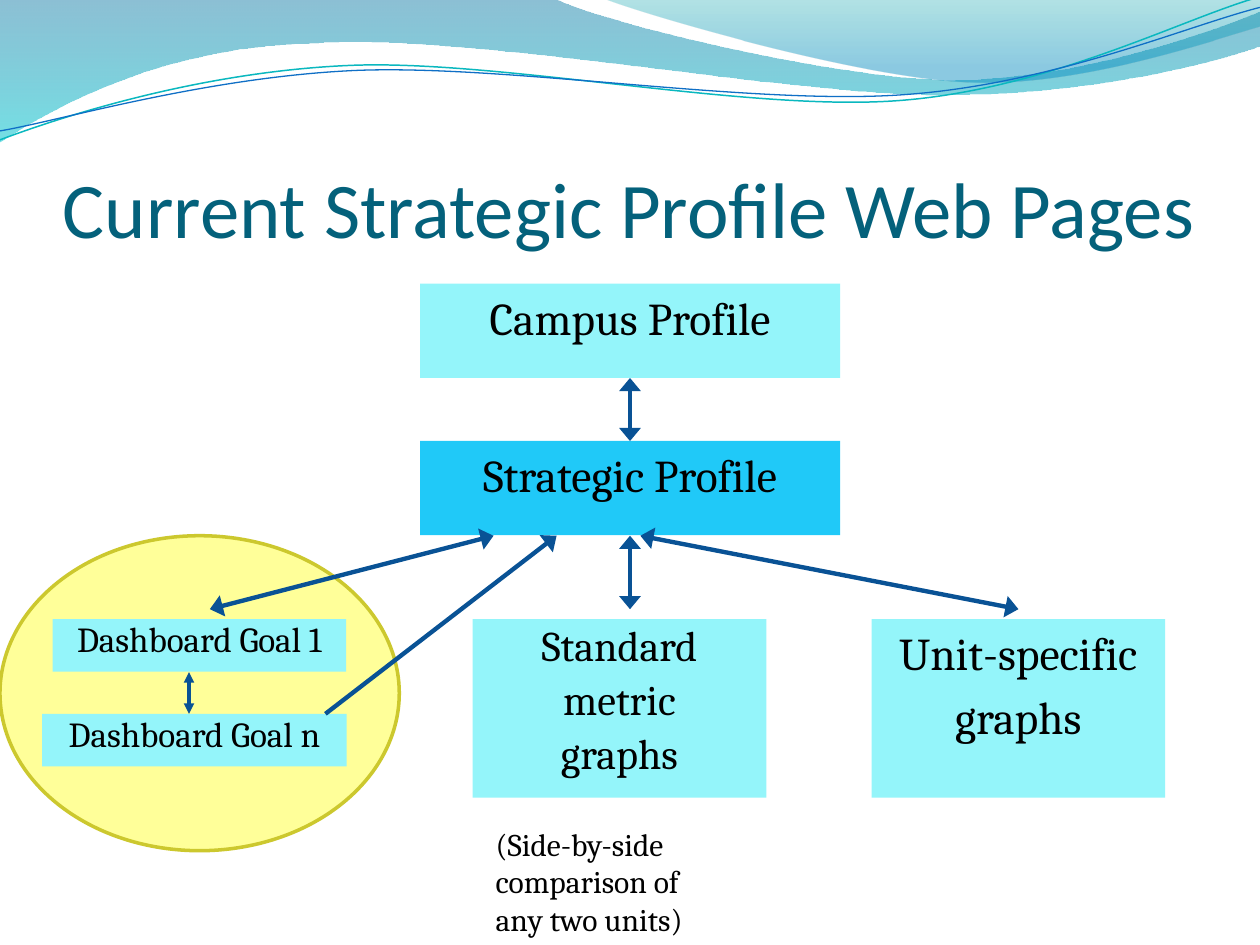
from dataclasses import dataclass

from lxml import etree
from pptx import Presentation
from pptx.dml.color import RGBColor
from pptx.enum.shapes import MSO_CONNECTOR, MSO_SHAPE
from pptx.enum.text import MSO_ANCHOR, MSO_AUTO_SIZE, PP_ALIGN
from pptx.oxml.ns import qn
from pptx.util import Cm, Pt

RECT, ELLIPSE = MSO_SHAPE.RECTANGLE, MSO_SHAPE.OVAL
STRAIGHT = MSO_CONNECTOR.STRAIGHT
CENTER, LEFT = PP_ALIGN.CENTER, PP_ALIGN.LEFT
TOP, BOTTOM = MSO_ANCHOR.TOP, MSO_ANCHOR.BOTTOM
FIT_SHAPE = MSO_AUTO_SIZE.SHAPE_TO_FIT_TEXT


@dataclass(frozen=True)
class Theme:
    title_font: str = "Calibri"
    body_font: str = "Cambria"
    title: str = "04617B"
    text: str = "000000"
    box: str = "94F5FA"
    focus: str = "20C9F8"
    arrow: str = "095295"
    oval: str = "FFFF99"
    oval_line: str = "CCC82E"
    teal_line: str = "0AB8BF"
    blue_line: str = "0F6FC6"
    wide_wave: tuple = ((0, "0074A1", 45), (1, "00C6CF", 55))
    right_wave: tuple = ((0, "00A1A9", 30), (0.8, "008BBF", 45))
    title_size: float = 45
    box_size: float = 26
    metric_size: float = 24.1
    goal_size: float = 20.1
    note_size: float = 18


THEME = Theme()

WIDE_WAVE = [
    [(0, 0)], [(11.18, -0.03)],
    [(12.09, 0.43), (16.87, 1.6), (19.25, 1.6)],
    [(21.67, 1.6), (24.33, 0.66), (25.4, 0.23)],
    [(25.43, 0.91)],
    [(24.97, 1.12), (22.1, 1.93), (18.95, 1.91)],
    [(15.8, 1.91), (9.7, 0.71), (6.53, 0.86)],
    [(3.28, 0.91), (1.17, 2.11), (-0.03, 2.87)],
]
RIGHT_WAVE = [
    [(12.17, -0.03)],
    [(12.93, 0.28), (17.32, 1.57), (19.53, 1.65)],
    [(21.74, 1.75), (24.41, 0.81), (25.4, 0.53)],
    [(25.4, 0)],
]
TEAL_CURVE = [
    [(0, 2.82)],
    [(1.22, 2.36), (4.01, 1.45), (7.04, 1.32)],
    [(10.03, 1.19), (15.06, 2.26), (18.11, 2.03)],
    [(21.16, 1.8), (23.83, 0.38), (25.35, -0.05)],
]
BLUE_CURVE = [
    [(0, 2.64)],
    [(1.19, 2.44), (4.17, 1.55), (7.19, 1.42)],
    [(10.24, 1.3), (15.16, 2.13), (18.21, 1.91)],
    [(21.23, 1.7), (23.9, 0.53), (25.4, 0.15)],
]


def rgb(color):
    return RGBColor.from_string(color)


def set_line(line, color, width):
    line.color.rgb = rgb(color)
    line.width = Pt(width)


def bend(sp, segments):
    edges = list(sp.element.spPr.iter(qn("a:lnTo")))
    for edge, segment in zip(edges, segments[1:]):
        if len(segment) == 3:
            edge.tag = qn("a:cubicBezTo")
            edge.remove(edge[0])
            for x, y in segment:
                etree.SubElement(edge, qn("a:pt"), x=str(Cm(x) - sp.left), y=str(Cm(y) - sp.top))


def add_outline(s, segments, close):
    first, *rest = [(Cm(x), Cm(y)) for x, y in (segment[-1] for segment in segments)]
    builder = s.shapes.build_freeform(*first)
    builder.add_line_segments(rest, close=close)
    sp = builder.convert_to_shape()
    sp.shadow.inherit = False
    bend(sp, segments)
    return sp


def add_wave(s, segments, stops):
    sp = add_outline(s, segments, True)
    sp.line.fill.background()
    sp.fill.gradient()
    sp.fill.gradient_angle = 270
    for stop, (position, color, _) in zip(sp.fill.gradient_stops, stops):
        stop.position = position
        stop.color.rgb = rgb(color)
    colors = list(sp.element.spPr.iter(qn("a:srgbClr")))
    for node, (_, _, opacity) in zip(colors, stops):
        etree.SubElement(node, qn("a:alpha"), val=str(opacity * 1000))


def add_curve(s, segments, color, width):
    sp = add_outline(s, segments, False)
    sp.fill.background()
    set_line(sp.line, color, width)


def set_percent_before(p, percent):
    p.space_before = Pt(0)
    spacing = p._p.pPr.find(qn("a:spcBef"))
    spacing.remove(spacing[0])
    etree.SubElement(spacing, qn("a:spcPct"), val=str(percent * 1000))


def style(p, size, font=THEME.body_font, color=THEME.text, align=LEFT):
    p.alignment = align
    p.font.size = Pt(size)
    p.font.name = font
    p.font.color.rgb = rgb(color)


def add_filled(s, kind, x, y, w, h, fill):
    sp = s.shapes.add_shape(kind, Cm(x), Cm(y), Cm(w), Cm(h))
    sp.shadow.inherit = False
    sp.fill.solid()
    sp.fill.fore_color.rgb = rgb(fill)
    sp.line.fill.background()
    return sp


def add_box(s, lines, x, y, w, h, size=THEME.box_size, fill=THEME.box, leading=None):
    tf = add_filled(s, RECT, x, y, w, h, fill).text_frame
    tf.word_wrap = True
    tf.vertical_anchor = TOP
    for i, text in enumerate(lines):
        p = tf.add_paragraph() if i else tf.paragraphs[0]
        p.text = text
        style(p, size, align=CENTER)
        p.line_spacing = leading
        set_percent_before(p, 20)


def add_text(s, text, x, y, w, h, anchor=TOP):
    tf = s.shapes.add_textbox(Cm(x), Cm(y), Cm(w), Cm(h)).text_frame
    tf.word_wrap = True
    tf.vertical_anchor = anchor
    tf.paragraphs[0].text = text
    return tf


def add_arrow(s, start, end, width=2.5, head="lg", ends=("headEnd", "tailEnd")):
    line = s.shapes.add_connector(STRAIGHT, *map(Cm, start + end))
    set_line(line.line, THEME.arrow, width)
    ln = line.line._get_or_add_ln()
    for tag in ends:
        etree.SubElement(ln, qn(f"a:{tag}"), type="triangle", w=head, len="med")
    etree.SubElement(line._element.spPr, qn("a:effectLst"))


def main():
    prs = Presentation()
    prs.slide_width, prs.slide_height = Cm(25.4), Cm(19.05)
    s = prs.slides.add_slide(prs.slide_layouts[6])

    add_wave(s, WIDE_WAVE, THEME.wide_wave)
    add_wave(s, RIGHT_WAVE, THEME.right_wave)
    add_curve(s, TEAL_CURVE, THEME.teal_line, 0.85)
    add_curve(s, BLUE_CURVE, THEME.blue_line, 0.75)
    oval = add_filled(s, ELLIPSE, 0, 10.8, 8.05, 6.35, THEME.oval)
    set_line(oval.line, THEME.oval_line, 2)

    title = add_text(s, "Current Strategic Profile Web Pages", 1.27, 1.95, 22.86, 3.18, BOTTOM)
    title.margin_left = title.margin_right = title.margin_bottom = 0
    style(title.paragraphs[0], THEME.title_size, THEME.title_font, THEME.title)

    add_box(s, ["Strategic Profile"], 8.47, 8.89, 8.47, 1.9, fill=THEME.focus)
    add_box(s, ["Standard", "metric", "graphs"], 9.53, 12.48, 5.92, 3.6,
            THEME.metric_size, leading=0.9)
    add_box(s, ["Unit-specific", "graphs"], 17.57, 12.48, 5.92, 3.6)
    note = add_text(s, "(Side-by-side comparison of any two units)", 9.74, 16.5, 5.08, 2.56)
    note.auto_size = FIT_SHAPE
    style(note.paragraphs[0], THEME.note_size)
    add_box(s, ["Campus Profile"], 8.47, 5.72, 8.47, 1.9)

    add_arrow(s, (12.7, 10.8), (12.7, 12.28))
    add_arrow(s, (9.95, 10.8), (4.23, 12.28))
    add_arrow(s, (12.91, 10.8), (20.53, 12.28))
    add_arrow(s, (12.7, 7.62), (12.7, 8.89))
    add_box(s, ["Dashboard Goal 1"], 1.06, 12.48, 5.92, 1.06, THEME.goal_size, leading=0.8)
    add_box(s, ["Dashboard Goal n"], 0.85, 14.39, 6.14, 1.06, THEME.goal_size, leading=0.8)
    add_arrow(s, (3.81, 13.55), (3.81, 14.39), 2, head="med")
    add_arrow(s, (6.56, 14.39), (11.22, 10.8), ends=("tailEnd",))

    prs.save("out.pptx")


if __name__ == "__main__":
    main()
